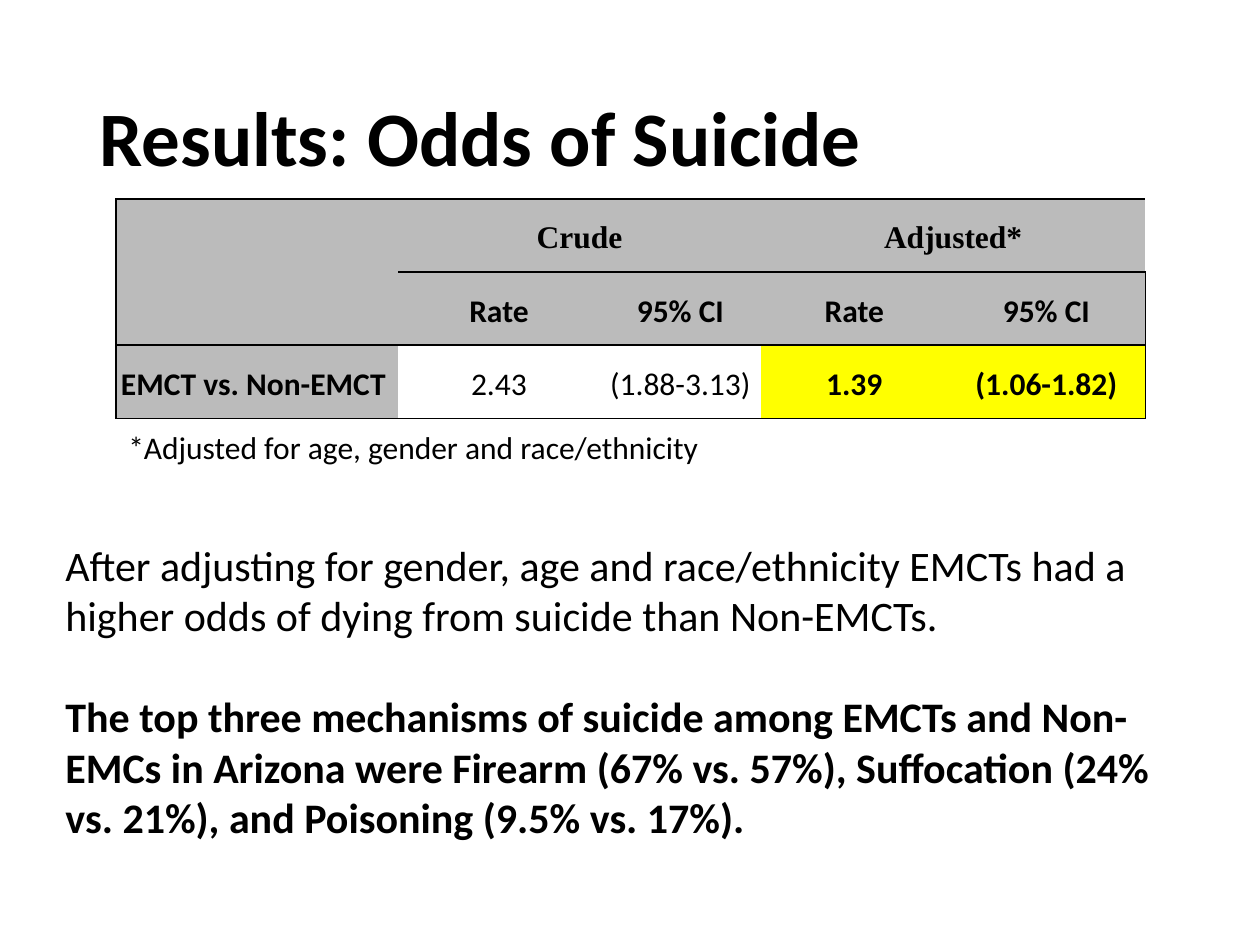
from lxml import etree
from pptx import Presentation
from pptx import util as u
from pptx.dml.color import RGBColor
from pptx.enum import text
from pptx.oxml.ns import qn

BLACK = RGBColor(0, 0, 0)
WHITE = RGBColor(255, 255, 255)
GRAY = RGBColor(0xBB, 0xBB, 0xBB)
YELLOW = RGBColor(255, 255, 0)

COLUMN_WIDTHS = [2.24, 1.6, 1.28, 1.48, 1.57]
ROW_HEIGHT = 0.58
ODDS = [
    ["", "Crude", "", "Adjusted*", ""],
    ["", "Rate", "95% CI", "Rate", "95% CI"],
    ["EMCT vs. Non-EMCT", "2.43", "(1.88-3.13)", "1.39", "(1.06-1.82)"],
]
MERGES = [((0, 0), (1, 0)), ((0, 1), (0, 2)), ((0, 3), (0, 4))]


class SlideBuilder:
    body_font = "Calibri"
    group_font = "Times New Roman"

    def __init__(self, deck):
        self.slide = deck.slides.add_slide(deck.slide_layouts[5])

    def style(self, paragraph, size, bold=False, font=body_font):
        for run in paragraph.runs:
            run.font.name = font
            run.font.size = u.Pt(size)
            run.font.bold = bold
            run.font.color.rgb = BLACK

    def title(self, words, left, top, width, height):
        heading = self.slide.shapes.title
        heading.left, heading.top = u.Inches(left), u.Inches(top)
        heading.width, heading.height = u.Inches(width), u.Inches(height)
        frame = heading.text_frame
        frame.text = words
        frame.vertical_anchor = text.MSO_ANCHOR.MIDDLE
        line = frame.paragraphs[0]
        line.alignment = text.PP_ALIGN.LEFT
        line.line_spacing = 0.9
        self.style(line, 44, True)

    def paragraphs(self, entries, size, left, top, width, height, gap=0):
        box = self.slide.shapes.add_textbox(*map(u.Inches, (left, top, width, height)))
        frame = box.text_frame
        frame.word_wrap = True
        frame.auto_size = text.MSO_AUTO_SIZE.SHAPE_TO_FIT_TEXT
        for index, (words, bold) in enumerate(entries):
            line = frame.add_paragraph() if index else frame.paragraphs[0]
            line.text = words
            if index:
                line.space_before = u.Pt(gap)
            self.style(line, size, bold)

    def borders(self, cell, visible):
        properties = cell._tc.get_or_add_tcPr()
        for index, side in enumerate("LRTB"):
            edge = etree.Element(qn(f"a:ln{side}"), w=str(u.Pt(1)))
            if side in visible:
                fill = etree.SubElement(edge, qn("a:solidFill"))
                etree.SubElement(fill, qn("a:srgbClr"), val=str(BLACK))
            else:
                etree.SubElement(edge, qn("a:noFill"))
            properties.insert(index, edge)

    def cell(self, cell, words, row, column):
        data = row == 2 and column > 0
        cell.fill.solid()
        cell.fill.fore_color.rgb = (YELLOW if column > 2 else WHITE) if data else GRAY
        cell.vertical_anchor = text.MSO_ANCHOR.MIDDLE
        cell.margin_left = cell.margin_right = u.Inches(0.04)
        cell.margin_top = cell.margin_bottom = 0
        if words:
            cell.text_frame.text = words
            line = cell.text_frame.paragraphs[0]
            line.alignment = text.PP_ALIGN.CENTER if column else text.PP_ALIGN.LEFT
            line.line_spacing = 1.15
            line.space_before = line.space_after = u.Pt(3)
            bold = not data or column > 2
            self.style(line, 18, bold, self.body_font if row else self.group_font)
        visible = {
            "L": column == 0,
            "R": column == len(COLUMN_WIDTHS) - 1,
            "T": row != 1 or column > 0,
            "B": row != 0 or column > 0,
        }
        self.borders(cell, [side for side, shown in visible.items() if shown])

    def table(self, rows, left, top):
        size = (sum(COLUMN_WIDTHS), ROW_HEIGHT * len(rows))
        table = self.slide.shapes.add_table(
            len(rows), len(COLUMN_WIDTHS), *map(u.Inches, (left, top, *size))
        ).table
        table.first_row = table.horz_banding = False
        for column, width in zip(table.columns, COLUMN_WIDTHS):
            column.width = u.Inches(width)
        for row, values in enumerate(rows):
            table.rows[row].height = u.Inches(ROW_HEIGHT)
            for column, words in enumerate(values):
                self.cell(table.cell(row, column), words, row, column)
        for start, end in MERGES:
            table.cell(*start).merge(table.cell(*end))


def main():
    deck = Presentation()
    deck.slide_width, deck.slide_height = u.Inches(10), u.Inches(7.5)
    results = SlideBuilder(deck)
    results.title("Results: Odds of Suicide", 0.69, 0.4, 8.62, 1.45)
    results.table(ODDS, 0.92, 1.58)
    footnote = "*Adjusted for age, gender and race/ethnicity"
    results.paragraphs([(footnote, False)], 18, 0.92, 3.35, 6.33, 0.4)
    findings = [
        ("After adjusting for gender, age and race/ethnicity EMCTs had a higher "
         "odds of dying from suicide than Non-EMCTs.", False),
        ("The top three mechanisms of suicide among EMCTs and Non-EMCs in Arizona "
         "were Firearm (67% vs. 57%), Suffocation (24% vs. 21%), and Poisoning "
         "(9.5% vs. 17%).", True),
    ]
    results.paragraphs(findings, 24, 0.42, 4.23, 9.25, 2.52, gap=29)
    deck.save("out.pptx")


if __name__ == "__main__":
    main()
